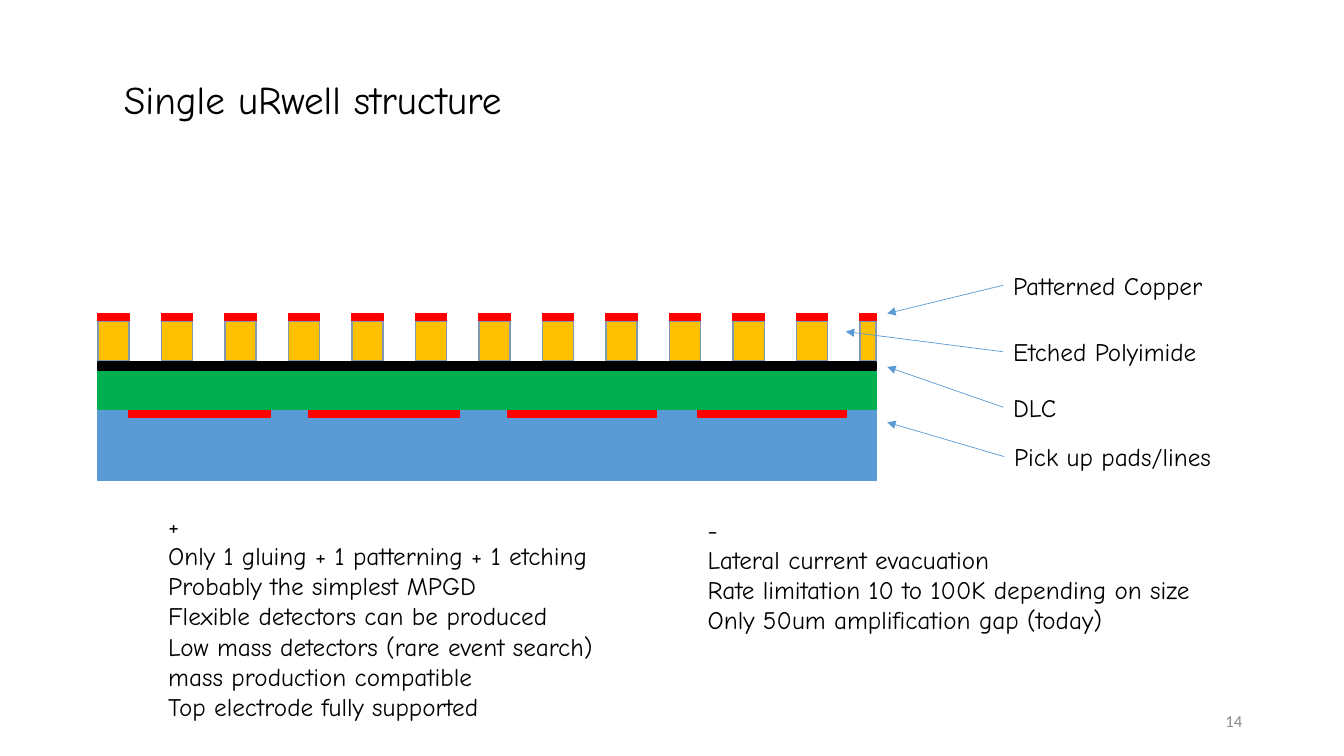
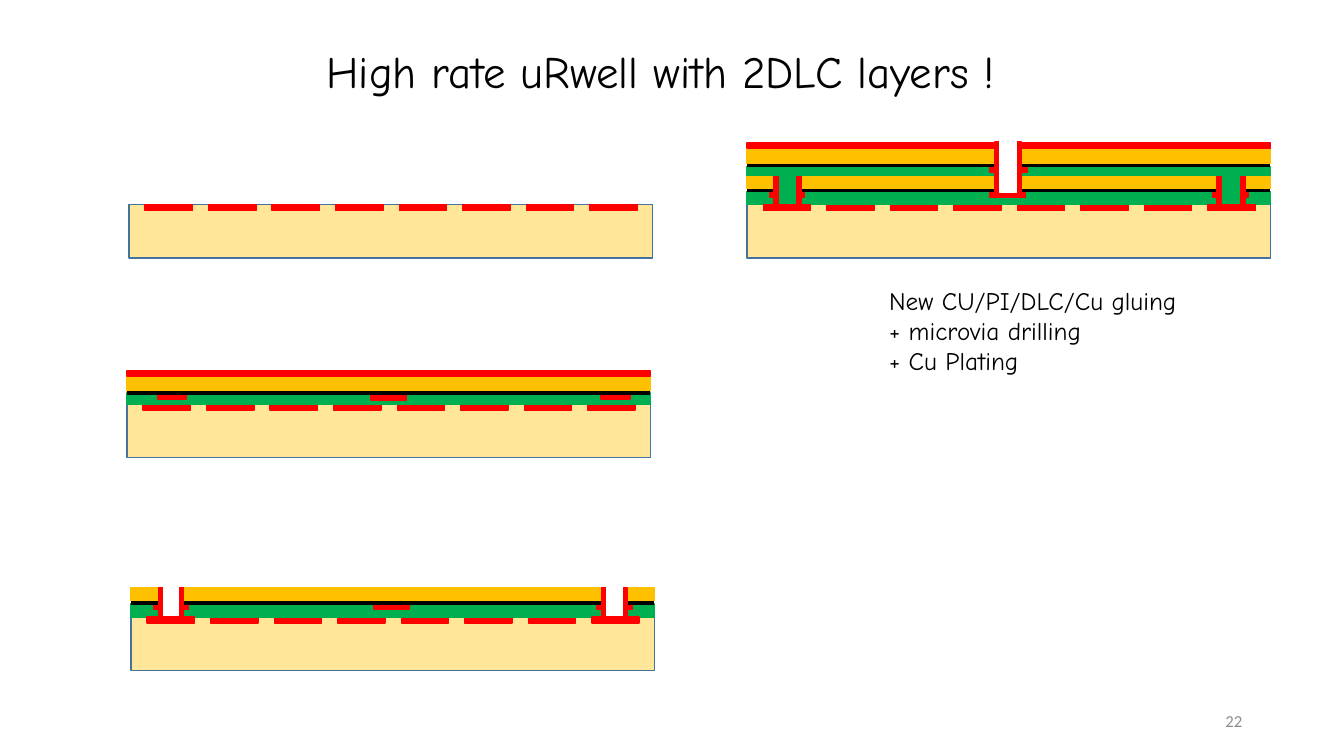
import pptx
import pptx.dml.color
import pptx.enum.shapes
import pptx.enum.text
import pptx.oxml.ns
import pptx.util
from lxml import etree

Inches = pptx.util.Inches
Pt = pptx.util.Pt

RED = "FF0000"
GOLD = "FFC000"
GREEN = "00B050"
BLUE = "5B9BD5"
BLACK = "000000"
WHITE = "FFFFFF"
SAND = "FFE699"
SAND_EDGE = "43739E"
POLYIMIDE_EDGE = "8497B0"
GREY = "8C8C8C"
BODY_FONT = "Comic Neue"
NUMBER_FONT = "Calibri"
STACK_WIDTH = 5.19


def color(value):
    return pptx.dml.color.RGBColor.from_string(value)


def add_text(slide, place, lines, size=18, font=BODY_FONT, ink=BLACK,
             middle=False, right=False, spacing=None):
    box = slide.shapes.add_textbox(*map(Inches, place))
    frame = box.text_frame
    frame.word_wrap = True
    if middle:
        frame.vertical_anchor = pptx.enum.text.MSO_ANCHOR.MIDDLE
    frame.text = "\n".join(lines)
    for para in frame.paragraphs:
        if right:
            para.alignment = pptx.enum.text.PP_ALIGN.RIGHT
        if spacing:
            para.line_spacing = spacing
        for span in para.runs:
            span.font.size = Pt(size)
            span.font.name = font
            span.font.color.rgb = color(ink)


def add_title(slide, place, text, size):
    add_text(slide, place, [text], size, middle=True, spacing=0.9)


def add_page_number(slide, number):
    add_text(slide, (9.42, 6.95, 3, 0.4), [str(number)], 12, NUMBER_FONT, GREY,
             middle=True, right=True)


def add_block(shapes, left, top, width, height, fill, edge=None):
    block = shapes.add_shape(pptx.enum.shapes.MSO_SHAPE.RECTANGLE,
                             Inches(left), Inches(top), Inches(width), Inches(height))
    block.shadow.inherit = False
    block.fill.solid()
    block.fill.fore_color.rgb = color(fill)
    block.line.color.rgb = color(edge or fill)
    block.line.width = Pt(1)


def add_line(shapes, start, end, ink, width, arrow=False):
    line = shapes.add_connector(pptx.enum.shapes.MSO_CONNECTOR.STRAIGHT,
                                *map(Inches, (*start, *end)))
    line.line.color.rgb = color(ink)
    line.line.width = Pt(width)
    if arrow:
        etree.SubElement(line.line._get_or_add_ln(),
                         pptx.oxml.ns.qn("a:tailEnd"), type="triangle")
    etree.SubElement(line._element.spPr, pptx.oxml.ns.qn("a:effectLst"))


class Stack:
    def __init__(self, slide, left, top):
        self.shapes = slide.shapes.add_group_shape().shapes
        self.left = left
        self.top = top

    def block(self, left, top, width, height, fill, edge=None):
        add_block(self.shapes, self.left + left, self.top + top, width, height, fill, edge)

    def layer(self, top, height, fill, edge=None):
        self.block(0, top, STACK_WIDTH, height, fill, edge)

    def carbon(self, top):
        level = self.top + top
        add_line(self.shapes, (self.left, level), (self.left + STACK_WIDTH, level), BLACK, 2.5)

    def pads(self, columns):
        for column in columns:
            self.block(0.16 + 0.63 * column, 0, 0.47, 0.06, RED)

    def substrate(self, columns):
        self.layer(0, 0.53, SAND, SAND_EDGE)
        self.pads(columns)

    def via(self, left, top, bore, wall, height, fill):
        self.block(left - wall, top, wall, height, RED)
        self.block(left + bore, top, wall, height, RED)
        self.block(left, top - 0.02, bore, height + 0.02, fill)

    def drilled_layers(self, bore, wall, fill):
        self.substrate(range(1, 7))
        self.layer(-0.13, 0.13, GREEN)
        self.layer(-0.29, 0.13, GOLD)
        for left in (0.22, 2.41, 4.62):
            self.block(left, -0.12, 0.35, 0.05, RED)
        self.carbon(-0.14)
        for left in (0.32, 4.72):
            self.via(left, -0.29, bore, wall, 0.32, fill)
        self.pads((0, 7))

    def copper_clad(self, gold_top):
        self.layer(gold_top, 0.15, GOLD)
        self.layer(gold_top - 0.05, 0.05, RED)
        self.carbon(gold_top + 0.17)


def add_glued_stack(slide, left, top):
    stack = Stack(slide, left, top)
    stack.substrate(range(8))
    stack.layer(-0.11, 0.11, GREEN)
    for bar_left, bar_top, width in ((0.3, -0.1, 0.29), (4.7, -0.1, 0.29), (2.42, -0.09, 0.35)):
        stack.block(bar_left, bar_top, width, 0.05, RED)
    stack.copper_clad(-0.28)


def add_double_stack(slide, left, top):
    stack = Stack(slide, left, top)
    stack.drilled_layers(0.16, 0.06, GREEN)
    stack.layer(-0.38, 0.09, GREEN)
    stack.copper_clad(-0.56)
    stack.via(2.51, -0.62, 0.16, 0.05, 0.5, WHITE)
    for flange_left in (2.41, 2.69):
        stack.block(flange_left, -0.37, 0.09, 0.05, RED)
    stack.block(2.51, -0.64, 0.16, 0.5, WHITE)


def add_detector(slide):
    shapes = slide.shapes
    for left, width in ((0.97, 3.89), (4.75, 3.94)):
        add_block(shapes, left, 3.59, width, 1.18, BLUE)
    for left, width in ((1.28, 1.4), (3.06, 1.5), (5.04, 1.47), (6.92, 1.47)):
        add_block(shapes, left, 4.06, width, 0.08, RED)
    for column in range(13):
        left = 0.97 + 0.63 * column
        width = 0.31 if column < 12 else 0.16
        add_block(shapes, left, 3.11, width, 0.08, RED)
        add_block(shapes, left, 3.19, width, 0.39, GOLD, POLYIMIDE_EDGE)
    add_block(shapes, 0.97, 3.59, 7.72, 0.08, BLACK)
    add_block(shapes, 0.97, 3.69, 7.72, 0.37, GREEN)


def add_callout(slide, text, left, top, tip):
    add_text(slide, (left, top, 2.28, 0.4), [text])
    add_line(slide.shapes, (left, top + 0.2), tip, BLUE, 0.5, arrow=True)


def build_single_structure(slide):
    add_title(slide, (1.13, 0.38, 10.76, 1.25), "Single uRwell structure", 28)
    add_detector(slide)
    for callout in (
        ("Patterned Copper", 9.95, 2.63, (8.8, 3.11)),
        ("Etched Polyimide", 9.95, 3.29, (8.39, 3.29)),
        ("DLC", 9.95, 3.84, (8.8, 3.64)),
        ("Pick up pads/lines", 9.96, 4.33, (8.8, 4.19)),
    ):
        add_callout(slide, *callout)
    add_text(slide, (1.57, 5.01, 5.05, 2.45), [
        "+",
        "Only 1 gluing + 1 patterning + 1 etching",
        "Probably the simplest MPGD",
        "Flexible detectors can be produced",
        "Low mass detectors (rare event search)",
        "mass production compatible",
        "Top electrode fully supported",
    ])
    add_text(slide, (6.92, 5.05, 5.39, 1.31), [
        "-",
        "Lateral current evacuation",
        "Rate limitation 10 to 100K depending on size",
        "Only 50um amplification gap (today)",
    ])
    add_page_number(slide, 14)


def build_high_rate(slide):
    add_title(slide, (3.14, 0.34, 10.12, 0.78), "High rate uRwell with 2DLC layers !", 32)
    Stack(slide, 1.28, 2.03).substrate(range(8))
    add_glued_stack(slide, 1.26, 4.01)
    Stack(slide, 1.3, 6.12).drilled_layers(0.15, 0.05, WHITE)
    add_double_stack(slide, 7.41, 2.03)
    add_text(slide, (8.72, 2.78, 3.29, 1.01), [
        "New CU/PI/DLC/Cu gluing",
        "+ microvia drilling",
        "+ Cu Plating",
    ])
    add_page_number(slide, 22)


def main():
    deck = pptx.Presentation()
    deck.slide_width = Inches(13.33)
    deck.slide_height = Inches(7.5)
    for build in (build_single_structure, build_high_rate):
        build(deck.slides.add_slide(deck.slide_layouts[6]))
    deck.save("out.pptx")


if __name__ == "__main__":
    main()
